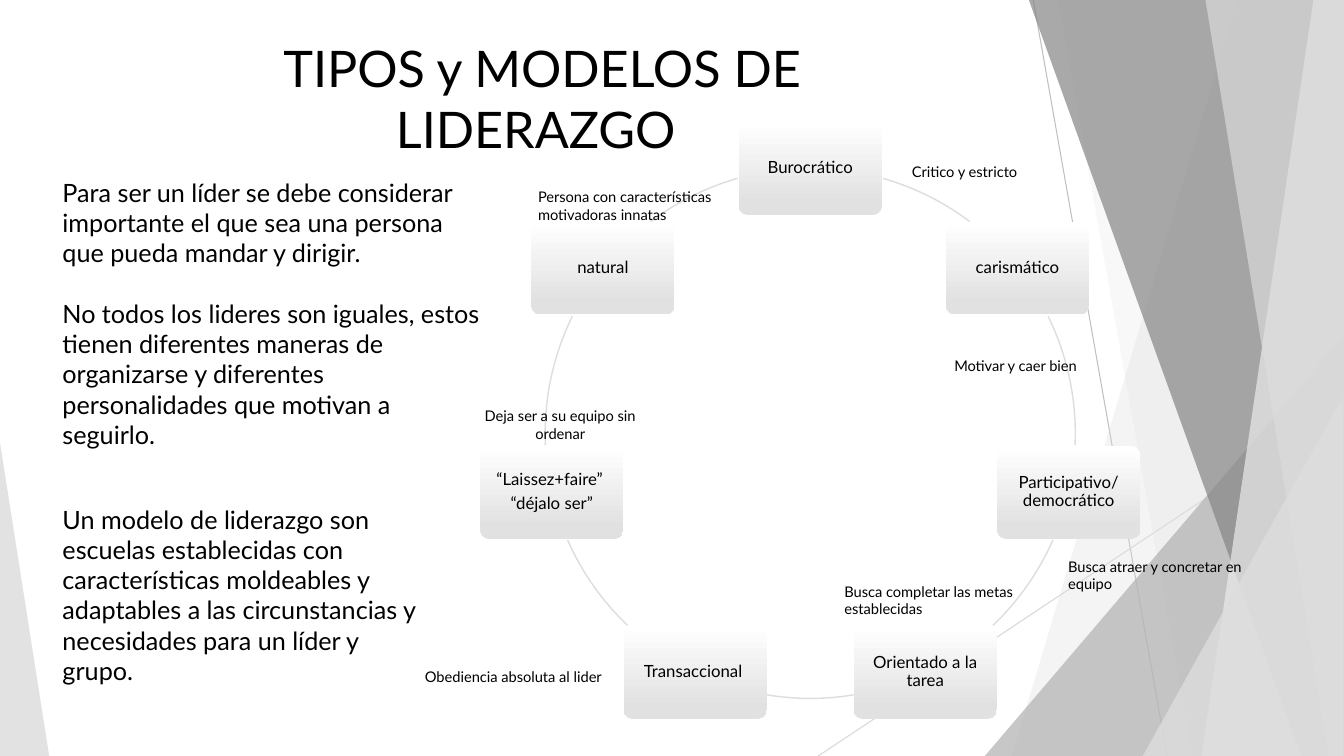
"""Build the slide on types and models of leadership."""
import math
from dataclasses import dataclass
from typing import Any

import lxml.etree
import pptx
import pptx.dml.color
import pptx.enum.dml
import pptx.enum.shapes
import pptx.enum.text
import pptx.oxml.ns
import pptx.util

Cm = pptx.util.Cm
Pt = pptx.util.Pt
Preset = pptx.enum.shapes.MSO_SHAPE
Align = pptx.enum.text.PP_ALIGN
Anchor = pptx.enum.text.MSO_ANCHOR

COLORS = {
    "text": "000000", "white": "FFFFFF", "node": "E1E1E1", "ring": "DDDDDD",
    "steep": "BFBFBF", "shallow": "D9D9D9", "pale": "DDDDDD",
    "medium": "B2B2B2", "dark": "858585", "light": "EBEBEB",
}
FONT = "Lato"
WIDTH, HEIGHT = 33.87, 19.05
RING_X, RING_Y, RADIUS = 20.42, 10.92, 6.68
NODE_W, NODE_H = 3.61, 2.34
CAPTION_W = 5.64
FRAME = {"word_wrap": True, "vertical_anchor": Anchor.TOP,
         "auto_size": pptx.enum.text.MSO_AUTO_SIZE.NONE}
NODE_FRAME = FRAME | {"vertical_anchor": Anchor.MIDDLE} | {
    f"margin_{side}": Cm(0.18) for side in ("left", "right", "top", "bottom")}
PLAIN = {"alignment": Align.LEFT, "space_before": Pt(0), "space_after": Pt(0)}
CENTERED = PLAIN | {"alignment": Align.CENTER}
NODE_PARAGRAPH = CENTERED | {"line_spacing": 0.9, "space_after": Pt(4.2)}


@dataclass
class Facet:
    top_x: float
    bottom_x: float
    color: str
    opacity: int


@dataclass
class Wedge:
    left: float
    top: float
    width: float
    apex: float
    color: str
    opacity: int


@dataclass
class Style:
    lines: list[str]
    arc_start: float
    arc_end: float


@dataclass
class Caption:
    text: str
    left: float
    top: float
    height: float
    paragraph: dict[str, Any]


BACKDROP = [
    Facet(31.19, 25.5, "pale", 30),
    Facet(26.67, 30.05, "pale", 20),
    Wedge(24.82, 8.46, 9.04, 1, "medium", 72),
    Facet(25.93, 32.79, "dark", 70),
    Facet(33.1, 30.28, "light", 70),
    Facet(30.38, 33.48, "pale", 65),
    Wedge(28.8, 9.98, 5.05, 1, "pale", 80),
    Wedge(0, 11.15, 1.24, 0, "pale", 85),
]
STYLES = [
    Style(["Burocrático"], 285.9, 307),
    Style(["carismático"], 333.8, 2.6),
    Style(["Participativo/ democrático"], 23.7, 46.4),
    Style(["Orientado a la tarea"], 80.6, 99.4),
    Style(["Transaccional "], 133.6, 156.3),
    Style(["“Laissez+faire” ", "“déjalo ser”"], 177.4, 206.2),
    Style(["natural"], 233, 254.1),
]
CAPTIONS = [
    Caption("Persona con características motivadoras innatas", 13.31, 4.62, 1.14, PLAIN),
    Caption("Critico y estricto", 22.73, 3.99, 0.74, PLAIN),
    Caption("Busca atraer y concretar en equipo", 26.67, 13.92, 1.14, PLAIN),
    Caption("Busca completar las metas establecidas", 21.03, 14.55, 1.14, PLAIN),
    Caption("Obediencia absoluta al lider", 10.46, 16.71, 0.74, PLAIN),
    Caption("Deja ser a su equipo sin ordenar", 11.3, 10.13, 1.14, CENTERED),
    Caption("Motivar y caer bien", 23.8, 8.86, 0.74, PLAIN),
]
TITLE = ["TIPOS y MODELOS DE LIDERAZGO "]
LEADERS = [
    "Para ser un líder se debe considerar importante el que sea una persona "
    "que pueda mandar y dirigir.",
    "No todos los lideres son iguales, estos tienen diferentes maneras de "
    "organizarse y diferentes personalidades que motivan a seguirlo.",
]
MODEL = ["Un modelo de liderazgo son escuelas establecidas con características "
         "moldeables y adaptables a las circunstancias y necesidades para un "
         "líder y grupo."]


def rgb(name: str) -> pptx.dml.color.RGBColor:
    return pptx.dml.color.RGBColor.from_string(COLORS[name])


def apply(target: Any, values: dict[str, Any]) -> None:
    for attribute, value in values.items():
        setattr(target, attribute, value)


def write(shape: Any, lines: list[str], size: float,
          frame: dict[str, Any], paragraph: dict[str, Any]) -> None:
    apply(shape.text_frame, frame)
    shape.text_frame.text = "\n".join(lines)
    for line in shape.text_frame.paragraphs:
        apply(line, paragraph)
        apply(line.font, {"name": FONT, "size": Pt(size)})
        line.font.color.rgb = rgb("text")


def place(shape: Any, left: float, top: float, width: float, height: float) -> None:
    apply(shape, {"left": Cm(left), "top": Cm(top),
                  "width": Cm(width), "height": Cm(height)})


def write_body(body: Any, lines: list[str]) -> None:
    write(body, lines, 18, FRAME, PLAIN)
    for index, line in enumerate(body.text_frame.paragraphs):
        line.space_before = Pt(21.6 if index else 0)
        properties = line._p.get_or_add_pPr()
        properties.set("marL", "0")
        properties.set("indent", "0")
        lxml.etree.SubElement(properties, pptx.oxml.ns.qn("a:buNone"))


def draw_backdrop(shapes: Any, piece: Facet | Wedge) -> None:
    if isinstance(piece, Facet):
        builder = shapes.build_freeform(Cm(piece.top_x), 0)
        builder.add_line_segments([(Cm(WIDTH), 0), (Cm(WIDTH), Cm(HEIGHT)),
                                   (Cm(piece.bottom_x), Cm(HEIGHT))])
        panel = builder.convert_to_shape()
    else:
        panel = shapes.add_shape(Preset.ISOSCELES_TRIANGLE, Cm(piece.left), Cm(piece.top),
                                 Cm(piece.width), Cm(HEIGHT - piece.top))
        panel.adjustments[0] = piece.apex
    panel.shadow.inherit = False
    panel.line.fill.background()
    panel.fill.solid()
    panel.fill.fore_color.rgb = rgb(piece.color)
    for color in panel.element.xpath("./p:spPr/a:solidFill/a:srgbClr"):
        alpha = lxml.etree.SubElement(color, pptx.oxml.ns.qn("a:alpha"))
        alpha.set("val", str(piece.opacity * 1000))


def draw_ray(shapes: Any, x1: float, y1: float, x2: float, y2: float, color: str) -> None:
    ray = shapes.add_connector(pptx.enum.shapes.MSO_CONNECTOR.STRAIGHT,
                               Cm(x1), Cm(y1), Cm(x2), Cm(y2))
    ray.line.width = Pt(0.75)
    ray.line.color.rgb = rgb(color)
    lxml.etree.SubElement(ray.element.spPr, pptx.oxml.ns.qn("a:effectLst"))


def draw_style(shapes: Any, style: Style, angle: float) -> None:
    left = RING_X + RADIUS * math.sin(angle) - NODE_W / 2
    top = RING_Y - RADIUS * math.cos(angle) - NODE_H / 2
    node = shapes.add_shape(Preset.ROUNDED_RECTANGLE, Cm(left), Cm(top), Cm(NODE_W), Cm(NODE_H))
    node.adjustments[0] = 0.1
    node.shadow.inherit = False
    node.line.fill.background()
    node.fill.gradient()
    node.fill.gradient_angle = 270
    for stop, position, color in zip(node.fill.gradient_stops, (0, 0.88), ("white", "node")):
        stop.position = position
        stop.color.rgb = rgb(color)
    write(node, style.lines, 12, NODE_FRAME, NODE_PARAGRAPH)

    arc = shapes.add_shape(Preset.ARC, Cm(RING_X - RADIUS), Cm(RING_Y - RADIUS),
                           Cm(2 * RADIUS), Cm(2 * RADIUS))
    for index, degrees in enumerate((style.arc_start, style.arc_end)):
        arc.adjustments[index] = degrees * 0.6
    arc.shadow.inherit = False
    arc.fill.background()
    arc.line.width = Pt(1)
    arc.line.color.rgb = rgb("ring")


def main() -> None:
    deck = pptx.Presentation()
    apply(deck, {"slide_width": Cm(WIDTH), "slide_height": Cm(HEIGHT)})
    slide = deck.slides.add_slide(deck.slide_layouts[3])
    shapes = slide.shapes
    title, leaders, model = slide.placeholders
    place(title, 6.3, 0.81, 14.73, 3.33)
    write(title, TITLE, 36, FRAME, CENTERED)
    place(leaders, 1.32, 4.34, 11.23, 11.02)
    write_body(leaders, LEADERS)
    place(model, 1.32, 12.57, 9.8, 4.88)
    write_body(model, MODEL)
    draw_ray(shapes, 26.04, 0, 29.41, HEIGHT, "steep")
    draw_ray(shapes, WIDTH, 10.24, 20.62, HEIGHT, "shallow")
    for piece in BACKDROP:
        draw_backdrop(shapes, piece)
    for index, style in enumerate(STYLES):
        draw_style(shapes, style, index * math.tau / len(STYLES))
    for caption in CAPTIONS:
        note = shapes.add_textbox(Cm(caption.left), Cm(caption.top),
                                  Cm(CAPTION_W), Cm(caption.height))
        write(note, [caption.text], 10.5, FRAME, caption.paragraph)
    deck.save("out.pptx")


if __name__ == "__main__":
    main()
